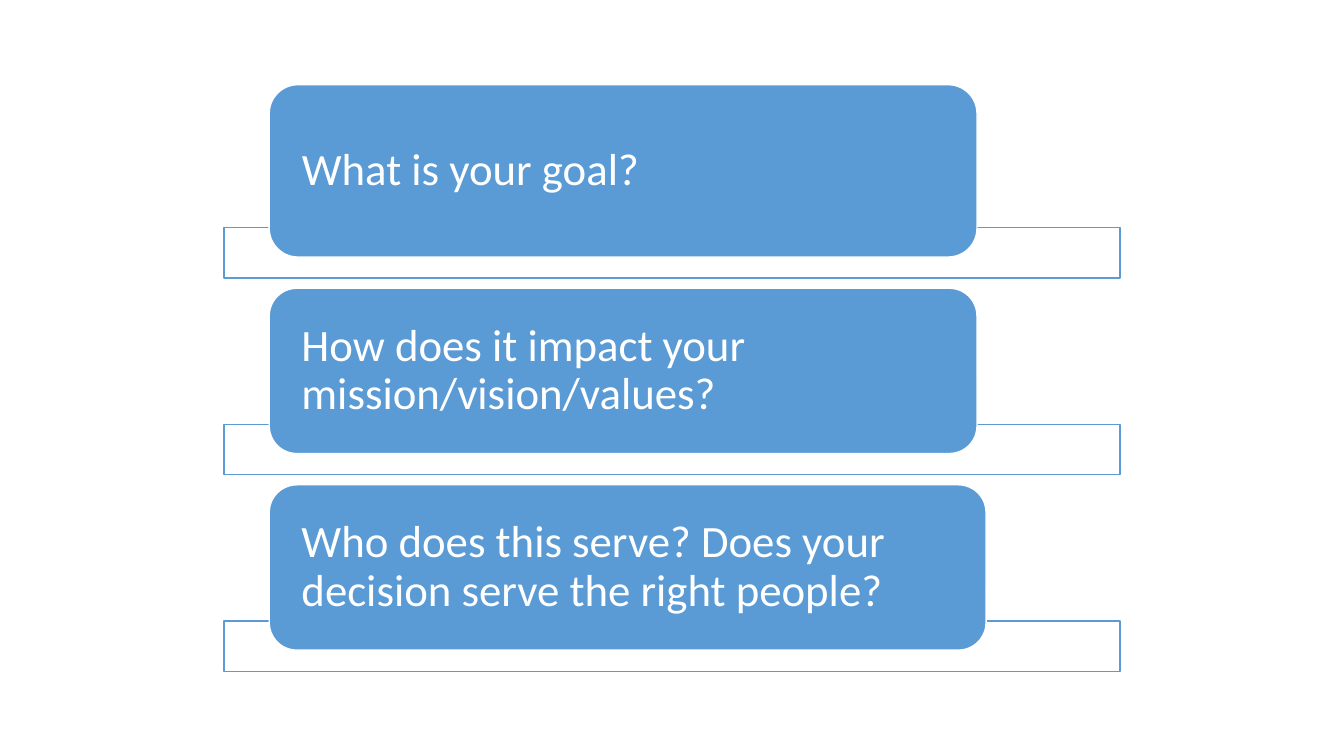
import pptx
import pptx.dml.color
import pptx.enum.shapes
import pptx.enum.text
import pptx.oxml.ns
import pptx.util
from lxml import etree

PX = 9144  # 100 px to the inch
COLORS = {"blue": "5B9BD5", "white": "FFFFFF"}
FONT = "Calibri"
SHAPES = pptx.enum.shapes.MSO_SHAPE

# Question, card width, card height
QUESTIONS = [
    ("What is your goal?", 702, 171),
    ("How does it impact your mission/vision/values?", 702, 164),
    ("Who does this serve? Does your decision serve the right people?", 711, 164),
]
BAR_LEFT, BAR_TOP, BAR_WIDTH, BAR_HEIGHT = 222, 226, 889, 50
ROW_PITCH = 195
CARD_INDENT = 45
CARD_OVERLAP = 29
TEXT_INSET = 24


def rgb(name):
    return pptx.dml.color.RGBColor.from_string(COLORS[name])


def add_box(s, kind, x, y, w, h, fill, line):
    sp = s.shapes.add_shape(kind, x * PX, y * PX, w * PX, h * PX)
    sp.shadow.inherit = False
    sp.fill.solid()
    sp.fill.fore_color.rgb = rgb(fill)
    sp.line.color.rgb = rgb(line)
    sp.line.width = pptx.util.Pt(1)
    return sp


def add_bar(s, x, y, w, h):
    sp = add_box(s, SHAPES.RECTANGLE, x, y, w, h, "white", "blue")
    # Slightly transparent fill
    color = sp._element.spPr.find(".//" + pptx.oxml.ns.qn("a:srgbClr"))
    etree.SubElement(color, pptx.oxml.ns.qn("a:alpha"), val="90000")


def add_card(s, x, y, w, h, text):
    sp = add_box(s, SHAPES.ROUNDED_RECTANGLE, x, y, w, h, "blue", "white")
    tf = sp.text_frame
    tf.word_wrap = True
    tf.vertical_anchor = pptx.enum.text.MSO_ANCHOR.MIDDLE
    tf.margin_left = tf.margin_right = TEXT_INSET * PX
    tf.margin_top = tf.margin_bottom = 0
    tf.text = text
    p = tf.paragraphs[0]
    p.alignment = pptx.enum.text.PP_ALIGN.LEFT
    p.line_spacing = 0.9
    r = p.runs[0]
    r.font.name = FONT
    r.font.size = pptx.util.Pt(32)
    r.font.color.rgb = rgb("white")


def add_question_list(s, x, y, w, h):
    for i, (text, card_w, card_h) in enumerate(QUESTIONS):
        bar_y = y + i * ROW_PITCH
        add_bar(s, x, bar_y, w, h)
        # The card's bottom edge overlaps its bar
        card_y = bar_y + CARD_OVERLAP - card_h
        add_card(s, x + CARD_INDENT, card_y, card_w, card_h, text)


def main():
    prs = pptx.Presentation()
    prs.slide_width = 1333 * PX
    prs.slide_height = 750 * PX
    s = prs.slides.add_slide(prs.slide_layouts[6])
    add_question_list(s, BAR_LEFT, BAR_TOP, BAR_WIDTH, BAR_HEIGHT)
    prs.save("out.pptx")


if __name__ == "__main__":
    main()
